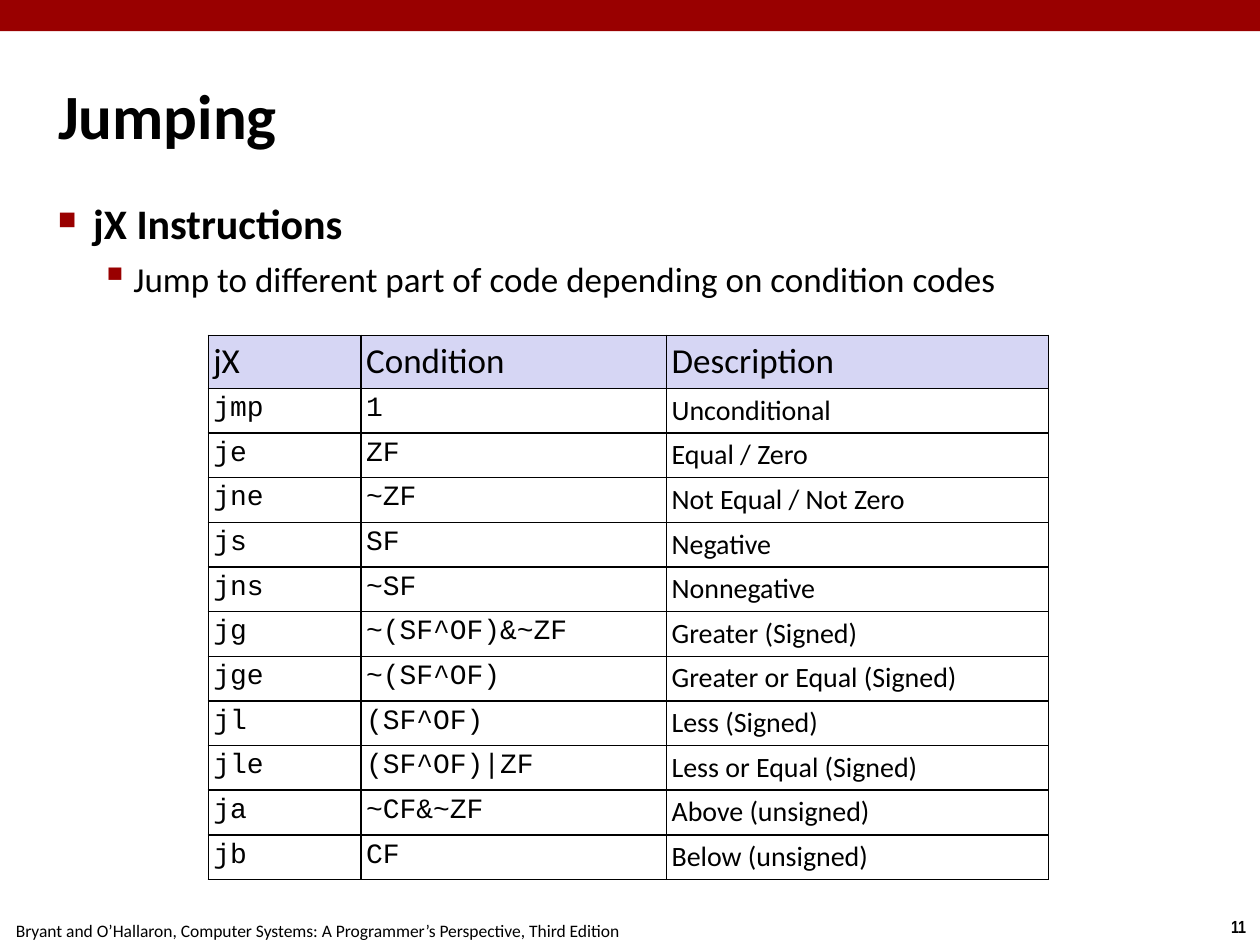
from lxml.etree import SubElement
from pptx import Presentation
from pptx.dml.color import RGBColor
from pptx.enum.shapes import MSO_SHAPE as Shape
from pptx.enum.text import MSO_ANCHOR as Anchor, MSO_AUTO_SIZE as AutoSize, PP_ALIGN as Align
from pptx.oxml.ns import qn
from pptx.util import Cm, Pt

COLORS = {"text": "000000", "accent": "990000", "header": "D6D6F4"}
BULLETS = [
    # text, level, size, bold, left margin, hanging, space before, mark, mark size %
    ("jX Instructions", 0, 24, True, 0.71, 0.71, 6, "■", 60),
    ("Jump to different part of code depending on condition codes",
     1, 20, False, 1.52, 0.66, 5, "▪", 110),
]
HEADINGS = ("jX", "Condition", "Description")
JUMPS = [
    ("jmp", "1", "Unconditional"),
    ("je", "ZF", "Equal / Zero"),
    ("jne", "~ZF", "Not Equal / Not Zero"),
    ("js", "SF", "Negative"),
    ("jns", "~SF", "Nonnegative"),
    ("jg", "~(SF^OF)&~ZF", "Greater (Signed)"),
    ("jge", "~(SF^OF)", "Greater or Equal (Signed)"),
    ("jl", "(SF^OF)", "Less (Signed)"),
    ("jle", "(SF^OF)|ZF", "Less or Equal (Signed)"),
    ("ja", "~CF&~ZF", "Above (unsigned)"),
    ("jb", "CF", "Below (unsigned)"),
]


class SlideBuilder:
    font, code_font, narrow_font = "Calibri", "Courier New", "Arial Narrow"
    inset = Cm(0.1)

    def __init__(self, slide):
        self.slide = slide

    def color(self, name):
        return RGBColor.from_string(COLORS[name])

    def run(self, paragraph, text, size, font=None, bold=False):
        run = paragraph.add_run()
        run.text = text
        run.font.name = font or self.font
        run.font.size = Pt(size)
        run.font.bold = bold
        run.font.color.rgb = self.color("text")

    def set_insets(self, holder):
        """Give a text frame or a table cell the same inset on all sides."""
        holder.margin_left = holder.margin_right = self.inset
        holder.margin_top = holder.margin_bottom = self.inset

    def band(self, left, top, width, height):
        band = self.slide.shapes.add_shape(
            Shape.RECTANGLE, Cm(left), Cm(top), Cm(width), Cm(height))
        band.shadow.inherit = False
        band.fill.solid()
        band.fill.fore_color.rgb = self.color("accent")
        band.line.fill.background()

    def title(self, text, left, top, width, height):
        title = self.slide.shapes.title
        title.left, title.top = Cm(left), Cm(top)
        title.width, title.height = Cm(width), Cm(height)
        frame = title.text_frame
        frame.auto_size = AutoSize.NONE
        frame.vertical_anchor = Anchor.MIDDLE
        self.set_insets(frame)
        frame.paragraphs[0].alignment = Align.LEFT
        self.run(frame.paragraphs[0], text, 36, bold=True)

    def label(self, text, left, top, width, height, font=None, bold=False):
        """Add a small centred line of footer text."""
        frame = self.slide.shapes.add_textbox(
            Cm(left), Cm(top), Cm(width), Cm(height)).text_frame
        frame.word_wrap = False
        frame.paragraphs[0].alignment = Align.CENTER
        self.run(frame.paragraphs[0], text, 10, font, bold)

    def bullets(self, items, left, top, width, height):
        frame = self.slide.shapes.add_textbox(
            Cm(left), Cm(top), Cm(width), Cm(height)).text_frame
        frame.word_wrap = True
        self.set_insets(frame)
        for i, (text, level, size, bold, margin, hanging, before, mark, percent) in enumerate(items):
            paragraph = frame.add_paragraph() if i else frame.paragraphs[0]
            paragraph.level = level
            paragraph.space_before = Pt(before)
            self.run(paragraph, text, size, bold=bold)
            props = paragraph._p.get_or_add_pPr()
            props.set("marL", str(Cm(margin)))
            props.set("indent", str(-Cm(hanging)))
            mark_color = SubElement(props, qn("a:buClr"))
            SubElement(mark_color, qn("a:srgbClr"), val=COLORS["accent"])
            SubElement(props, qn("a:buSzPct"), val=str(percent * 1000))
            SubElement(props, qn("a:buChar"), char=mark)

    def borders(self, cell):
        props = cell._tc.get_or_add_tcPr()
        for i, side in enumerate(("lnL", "lnR", "lnT", "lnB")):
            line = SubElement(props, qn(f"a:{side}"), w=str(Pt(1)))
            fill = SubElement(line, qn("a:solidFill"))
            SubElement(fill, qn("a:srgbClr"), val=COLORS["text"])
            props.insert(i, line)

    def table(self, headings, records, left, top, widths, header_height, row_height):
        rows = [headings, *records]
        heights = [header_height] + [row_height] * len(records)
        table = self.slide.shapes.add_table(
            len(rows), len(widths), Cm(left), Cm(top),
            Cm(sum(widths)), Cm(sum(heights))).table
        table.first_row = table.horz_banding = False
        for column, width in zip(table.columns, widths):
            column.width = Cm(width)
        for row, height in zip(table.rows, heights):
            row.height = Cm(height)
        for r, texts in enumerate(rows):
            for c, text in enumerate(texts):
                cell = table.cell(r, c)
                self.set_insets(cell)
                is_header, is_code = r == 0, r > 0 and c < 2
                if is_header:
                    cell.fill.solid()
                    cell.fill.fore_color.rgb = self.color("header")
                else:
                    cell.fill.background()
                self.borders(cell)
                self.run(cell.text_frame.paragraphs[0], text,
                         20 if is_header else 16, self.code_font if is_code else self.font)


def main():
    deck = Presentation()
    deck.slide_width, deck.slide_height = Cm(25.4), Cm(19.05)
    builder = SlideBuilder(deck.slides.add_slide(deck.slide_layouts[5]))
    builder.label("11", 24.54, 18.34, 0.86, 0.69, builder.narrow_font, bold=True)
    builder.label("Bryant and O’Hallaron, Computer Systems: "
                  "A Programmer’s Perspective, Third Edition", -0.05, 18.42, 12.9, 0.69)
    builder.band(0, 0, 25.4, 0.63)
    builder.title("Jumping", 1.07, 0.71, 23.29, 3.18)
    builder.bullets(BULLETS, 1.07, 3.89, 23.29, 2.39)
    builder.table(HEADINGS, JUMPS, 4.2, 6.76, (3.08, 6.16, 7.7), 1.07, 0.9)
    deck.save("out.pptx")


if __name__ == "__main__":
    main()
